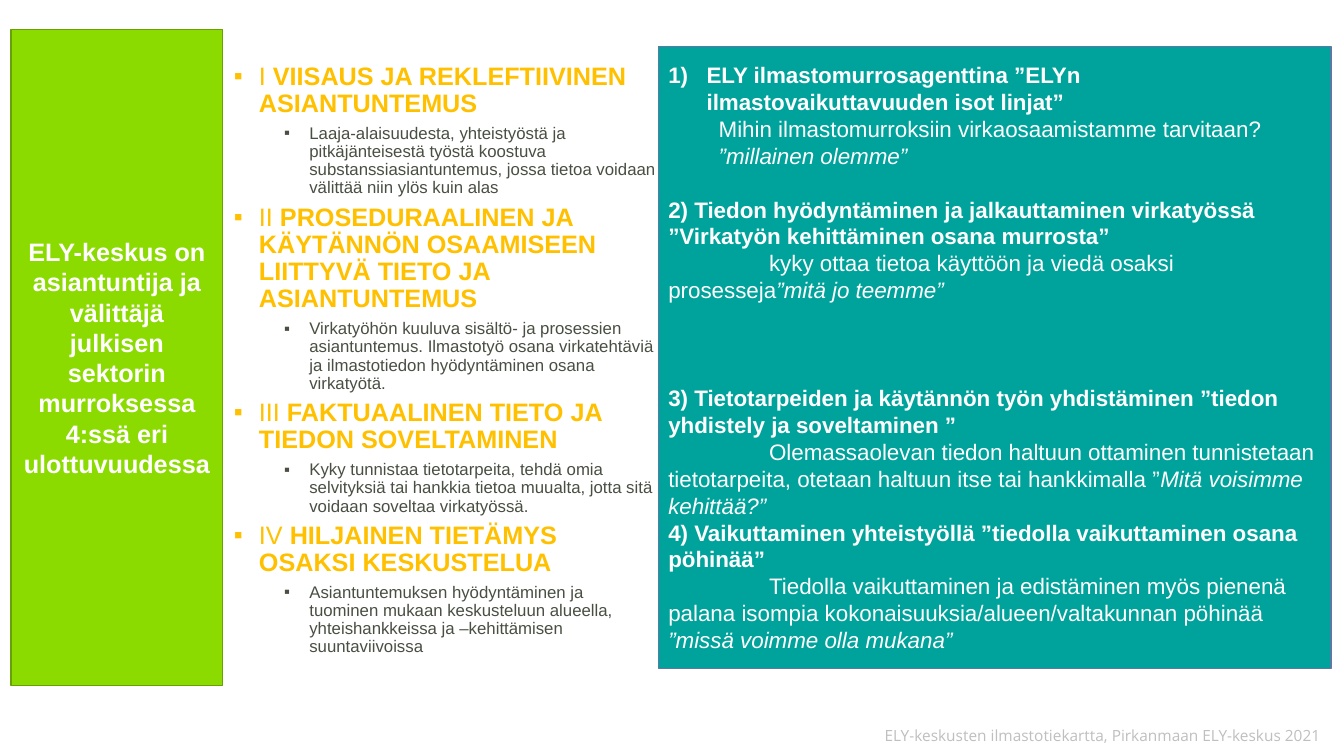
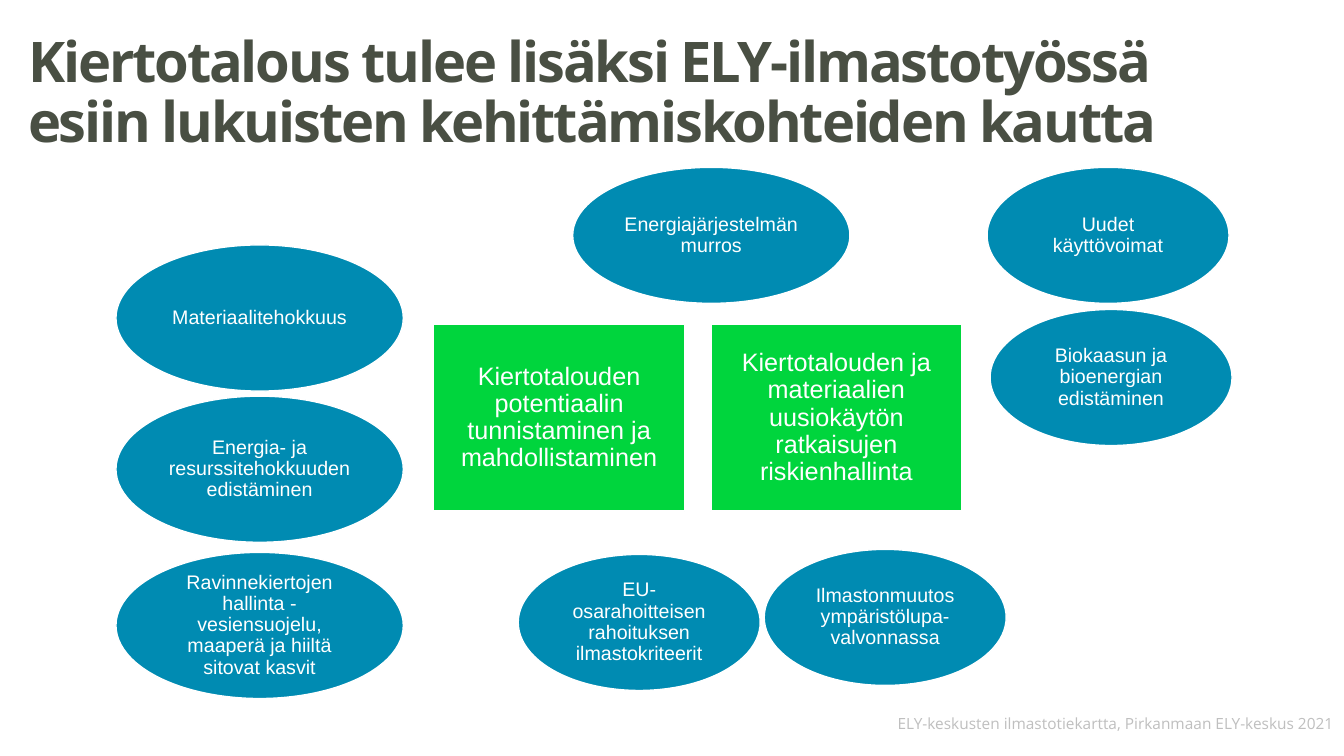
from dataclasses import dataclass

from lxml import etree
from pptx import Presentation
from pptx.dml.color import RGBColor
from pptx.enum.shapes import MSO_SHAPE
from pptx.enum.text import MSO_ANCHOR, PP_ALIGN
from pptx.oxml.ns import qn
from pptx.util import Emu, Pt

RECT, OVAL = MSO_SHAPE.RECTANGLE, MSO_SHAPE.OVAL
TOP, MIDDLE = MSO_ANCHOR.TOP, MSO_ANCHOR.MIDDLE
LEFT, CENTER, RIGHT = PP_ALIGN.LEFT, PP_ALIGN.CENTER, PP_ALIGN.RIGHT
PX = 9144  # 100 px to the inch


@dataclass(frozen=True)
class Theme:
    body_font: str = "Arial"
    title_font: str = "Open Sans"
    white: str = "FFFFFF"
    dark: str = "494F43"
    grey: str = "BFBFBF"
    amber: str = "FFC000"
    teal: str = "00A39B"
    teal_edge: str = "5C78A4"
    lime: str = "8BDB00"
    lime_edge: str = "67A200"
    green: str = "00D53D"
    blue: str = "008BB2"
    title: int = 40
    large: int = 18
    panel: int = 16
    topic: int = 14
    small: int = 12
    footer: int = 11
    tight: float = 0.9


T = Theme()

# Content: places are (left, top, width, height) in px
FOOTER = "ELY-keskusten ilmastotiekartta, Pirkanmaan ELY-keskus 2021"

SIDE_TEXT = ("ELY-keskus on asiantuntija ja välittäjä julkisen sektorin "
             "murroksessa 4:ssä eri ulottuvuudessa")

DIMENSIONS = [
    ("I", " VIISAUS JA REKLEFTIIVINEN ASIANTUNTEMUS",
     "Laaja-alaisuudesta, yhteistyöstä ja pitkäjänteisestä työstä koostuva "
     "substanssiasiantuntemus, jossa tietoa voidaan välittää niin ylös kuin alas"),
    ("II", " PROSEDURAALINEN JA KÄYTÄNNÖN OSAAMISEEN LIITTYVÄ TIETO JA ASIANTUNTEMUS",
     "Virkatyöhön kuuluva sisältö- ja prosessien asiantuntemus. Ilmastotyö osana "
     "virkatehtäviä ja ilmastotiedon hyödyntäminen osana virkatyötä."),
    ("III ", "FAKTUAALINEN TIETO JA TIEDON SOVELTAMINEN",
     "Kyky tunnistaa tietotarpeita, tehdä omia selvityksiä tai hankkia tietoa "
     "muualta, jotta sitä voidaan soveltaa virkatyössä."),
    ("IV", " HILJAINEN TIETÄMYS OSAKSI KESKUSTELUA",
     "Asiantuntemuksen hyödyntäminen ja tuominen mukaan keskusteluun alueella, "
     "yhteishankkeissa ja –kehittämisen suuntaviivoissa"),
]

# Heading, description, closing quote, heading format, description format
ROLES = [
    ("ELY ilmastomurrosagenttina ”ELYn ilmastovaikuttavuuden isot linjat”",
     "Mihin ilmastomurroksiin virkaosaamistamme tarvitaan? ", "”millainen olemme”",
     dict(margin=38, indent=-38, number="arabicParenR"), dict(margin=50)),
    ("2) Tiedon hyödyntäminen ja jalkauttaminen virkatyössä "
     "”Virkatyön kehittäminen osana murrosta”",
     "kyky ottaa tietoa käyttöön ja viedä osaksi prosesseja", "”mitä jo teemme”",
     dict(before=19), dict(indent=100)),
    ("3) Tietotarpeiden ja käytännön työn yhdistäminen "
     "”tiedon yhdistely ja soveltaminen ”",
     "Olemassaolevan tiedon haltuun ottaminen tunnistetaan tietotarpeita, "
     "otetaan haltuun itse tai hankkimalla ”", "Mitä voisimme kehittää?”",
     dict(before=58), dict(indent=100)),
    ("4) Vaikuttaminen yhteistyöllä ”tiedolla vaikuttaminen osana pöhinää”",
     "Tiedolla vaikuttaminen ja edistäminen myös pienenä palana isompia "
     "kokonaisuuksia/alueen/valtakunnan pöhinää ", "”missä voimme olla mukana”",
     {}, dict(indent=100)),
]

TITLE = ("Kiertotalous tulee lisäksi ELY-ilmastotyössä esiin "
         "lukuisten kehittämiskohteiden kautta")

GOALS = [
    "Kiertotalouden potentiaalin tunnistaminen ja mahdollistaminen",
    "Kiertotalouden ja materiaalien uusiokäytön ratkaisujen riskienhallinta",
]
GOAL_LEFT, GOAL_TOP, GOAL_W, GOAL_H, GOAL_GAP = 430, 322, 249, 185, 26

TOPICS = [
    ("Materiaalitehokkuus", (115, 243, 285, 145)),
    ("Energia- ja resurssitehokkuuden edistäminen", (115, 393, 285, 145)),
    ("Ravinnekiertojen hallinta - vesiensuojelu, maaperä ja hiiltä sitovat kasvit",
     (115, 548, 285, 145)),
    ("Ilmastonmuutos ympäristölupa-valvonnassa", (758, 545, 240, 135)),
    ("EU-osarahoitteisen rahoituksen ilmastokriteerit", (514, 550, 240, 135)),
    ("Biokaasun ja bioenergian edistäminen", (982, 307, 240, 135)),
    ("Energiajärjestelmän murros", (568, 166, 275, 135)),
    ("Uudet käyttövoimat", (979, 166, 240, 135)),
]


# Helpers
def rgb(value):
    return RGBColor.from_string(value)


def place(box):
    return [Emu(v * PX) for v in box]


def set_frame(sp, anchor, inset=None):
    tf = sp.text_frame
    tf.word_wrap = True
    tf.vertical_anchor = anchor
    if inset is not None:
        tf.margin_left = tf.margin_right = Emu(inset * PX)
        tf.margin_top = tf.margin_bottom = Emu(inset * PX)
    return tf


def add_box(s, kind, box, fill, line, inset=None):
    sp = s.shapes.add_shape(kind, *place(box))
    sp.shadow.inherit = False
    sp.fill.solid()
    sp.fill.fore_color.rgb = rgb(fill)
    sp.line.color.rgb = rgb(line)
    sp.line.width = Pt(1)
    return set_frame(sp, MIDDLE, inset)


def add_text(s, box, anchor):
    return set_frame(s.shapes.add_textbox(*place(box)), anchor)


def add_par(tf, runs, size, color, font=T.body_font, align=LEFT, margin=0, indent=0,
            bullet=None, number=None, spacing=None, before=0):
    """Add a paragraph; runs are (text, style) pairs with style '', 'b' or 'i'."""
    first = not tf.paragraphs[0].runs
    p = tf.paragraphs[0] if first else tf.add_paragraph()
    pPr = p._p.get_or_add_pPr()
    pPr.set("marL", str(margin * PX))
    pPr.set("indent", str(indent * PX))
    if bullet or number:
        etree.SubElement(pPr, qn("a:buFont")).set("typeface", T.body_font)
    if bullet:
        etree.SubElement(pPr, qn("a:buChar")).set("char", bullet)
    elif number:
        etree.SubElement(pPr, qn("a:buAutoNum")).set("type", number)
    p.alignment = align
    if spacing:
        p.line_spacing = spacing
    if before and not first:
        p.space_before = Pt(before)
    for text, style in runs:
        r = p.add_run()
        r.text = text
        r.font.name = font
        r.font.size = Pt(size)
        r.font.color.rgb = rgb(color)
        r.font.bold = style == "b"
        r.font.italic = style == "i"
    return p


def add_footer(s, left, top):
    tf = add_text(s, (left, top, 682, 40), MIDDLE)
    add_par(tf, [(FOOTER, "")], T.footer, T.grey, T.title_font, RIGHT)


# Slides
def dimensions_slide(prs):
    s = prs.slides.add_slide(prs.slide_layouts[6])

    # Role panel
    tf = add_box(s, RECT, (653, 46, 667, 617), T.teal, T.teal_edge)
    for heading, description, quote, head_fmt, desc_fmt in ROLES:
        add_par(tf, [(heading, "b")], T.panel, T.white, **head_fmt)
        add_par(tf, [(description, ""), (quote, "i")], T.panel, T.white, **desc_fmt)

    # Side band
    tf = add_box(s, RECT, (11, 29, 210, 651), T.lime, T.lime_edge)
    add_par(tf, [(SIDE_TEXT, "b")], T.large, T.white, align=CENTER)

    # Four dimensions
    tf = add_text(s, (172, 58, 489, 648), TOP)
    listed = dict(indent=-25, bullet="▪", spacing=T.tight, before=5)
    for numeral, name, detail in DIMENSIONS:
        add_par(tf, [(numeral, ""), (name, "b")], T.large, T.amber, margin=75, **listed)
        add_par(tf, [(detail, "")], T.small, T.dark, margin=125, **listed)

    add_footer(s, 638, 710)


def circular_slide(prs):
    s = prs.slides.add_slide(prs.slide_layouts[6])

    # Title
    tf = add_text(s, (18, 21, 1151, 145), MIDDLE)
    p = add_par(tf, [(TITLE, "b")], T.title, T.dark, T.title_font, spacing=T.tight)
    p.runs[0].font._element.set("spc", "-150")

    # Goals in the middle, topics around them
    goals = [(text, (GOAL_LEFT + i * (GOAL_W + GOAL_GAP), GOAL_TOP, GOAL_W, GOAL_H))
             for i, text in enumerate(GOALS)]
    for items, kind, fill, size in ((goals, RECT, T.green, T.large),
                                    (TOPICS, OVAL, T.blue, T.topic)):
        for text, box in items:
            tf = add_box(s, kind, box, fill, T.white, inset=5)
            add_par(tf, [(text, "")], size, T.white, align=CENTER, spacing=T.tight)

    add_footer(s, 651, 698)


def main():
    prs = Presentation()
    prs.slide_width, prs.slide_height = place((1333, 750))
    dimensions_slide(prs)
    circular_slide(prs)
    prs.save("out.pptx")


if __name__ == "__main__":
    main()
